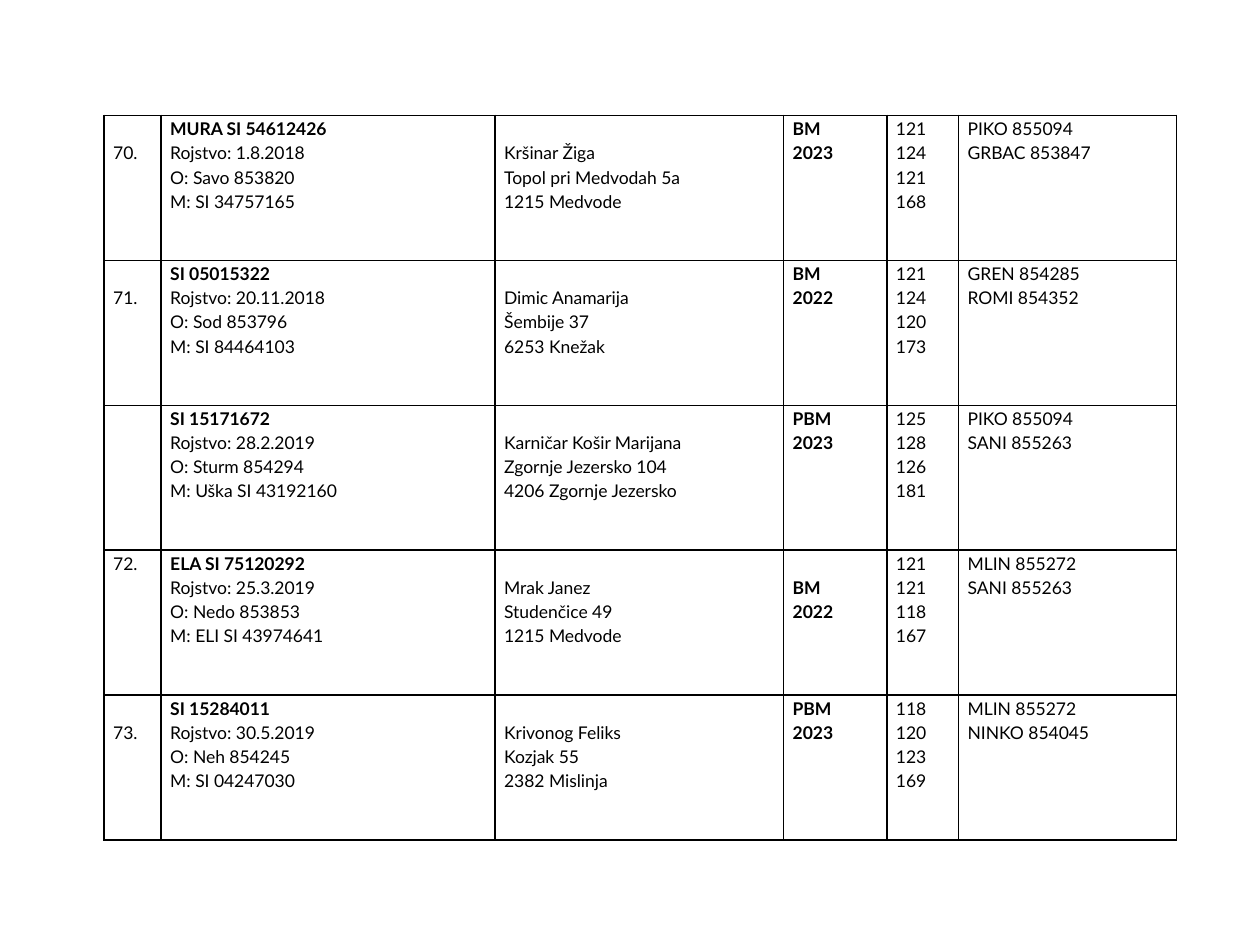
from lxml import etree
from pptx import Presentation
from pptx.dml.color import RGBColor
from pptx.enum.text import PP_ALIGN
from pptx.oxml.ns import qn
from pptx.util import Pt

BLACK = RGBColor(0, 0, 0)
JUSTIFY = PP_ALIGN.JUSTIFY
FONT = "Lato"
BLANK_LAYOUT = 6
LINE_PITCH = 13.8
COLUMN_WIDTHS = [32.6, 190.8, 164.9, 59, 41, 124.4]
ROW_HEIGHT = 82.8
NUMBER, ANIMAL, BREEDER, STATUS = range(4)

RECORDS = [
    ("70.",
     "MURA SI 54612426|Rojstvo: 1.8.2018|O: Savo 853820|M: SI 34757165",
     "Kršinar Žiga|Topol pri Medvodah 5a|1215 Medvode",
     "BM|2023", "121|124|121|168", "PIKO 855094|GRBAC 853847"),
    ("71.",
     "SI 05015322|Rojstvo: 20.11.2018|O: Sod 853796|M: SI 84464103",
     "Dimic Anamarija|Šembije 37|6253 Knežak",
     "BM|2022", "121|124|120|173", "GREN 854285|ROMI 854352"),
    ("",
     "SI 15171672|Rojstvo: 28.2.2019|O: Sturm 854294|M: Uška SI 43192160",
     "Karničar Košir Marijana|Zgornje Jezersko 104|4206 Zgornje Jezersko",
     "PBM|2023", "125|128|126|181", "PIKO 855094|SANI 855263"),
    ("72.",
     "ELA SI 75120292|Rojstvo: 25.3.2019|O: Nedo 853853|M: ELI SI 43974641",
     "Mrak Janez|Studenčice 49|1215 Medvode",
     "BM|2022", "121|121|118|167", "MLIN 855272|SANI 855263"),
    ("73.",
     "SI 15284011|Rojstvo: 30.5.2019|O: Neh 854245|M: SI 04247030",
     "Krivonog Feliks|Kozjak 55|2382 Mislinja",
     "PBM|2023", "118|120|123|169", "MLIN 855272|NINKO 854045"),
]


def starts_lower(record, column):
    if record[NUMBER] == "72.":
        return column in (BREEDER, STATUS)
    return column in (NUMBER, BREEDER)


def add_borders(cell):
    properties = cell._tc.get_or_add_tcPr()
    for position, side in enumerate(("lnL", "lnR", "lnT", "lnB")):
        border = etree.Element(qn(f"a:{side}"), w=str(Pt(1)))
        fill = etree.SubElement(border, qn("a:solidFill"))
        etree.SubElement(fill, qn("a:srgbClr"), val=str(BLACK))
        properties.insert(position, border)


def write_line(paragraph, wording, bold):
    paragraph.alignment = JUSTIFY
    paragraph.line_spacing = 1.15
    run = paragraph.add_run()
    run.text = wording
    run.font.name = FONT
    run.font.size = Pt(10)
    run.font.bold = bold
    run.font.color.rgb = BLACK


def fill_cell(cell, record, column):
    cell.margin_left = cell.margin_right = Pt(5.2)
    cell.margin_top = Pt(LINE_PITCH if starts_lower(record, column) else 0)
    cell.margin_bottom = Pt(0)
    cell.fill.background()
    add_borders(cell)
    if not record[column]:
        return
    frame = cell.text_frame
    for index, wording in enumerate(record[column].split("|")):
        paragraph = frame.add_paragraph() if index else frame.paragraphs[0]
        bold = column == STATUS or (column == ANIMAL and index == 0)
        write_line(paragraph, wording, bold)


def add_register(slide):
    table = slide.shapes.add_table(
        len(RECORDS), len(COLUMN_WIDTHS), Pt(59.5), Pt(66),
        Pt(sum(COLUMN_WIDTHS)), Pt(ROW_HEIGHT * len(RECORDS))).table
    table.first_row = False
    table.horz_banding = False
    for column, width in zip(table.columns, COLUMN_WIDTHS):
        column.width = Pt(width)
    for row, record in zip(table.rows, RECORDS):
        row.height = Pt(ROW_HEIGHT)
        for column, cell in enumerate(row.cells):
            fill_cell(cell, record, column)


def main():
    presentation = Presentation()
    presentation.slide_width = Pt(720)
    presentation.slide_height = Pt(540)
    slide = presentation.slides.add_slide(presentation.slide_layouts[BLANK_LAYOUT])
    add_register(slide)
    presentation.save("out.pptx")


if __name__ == "__main__":
    main()
